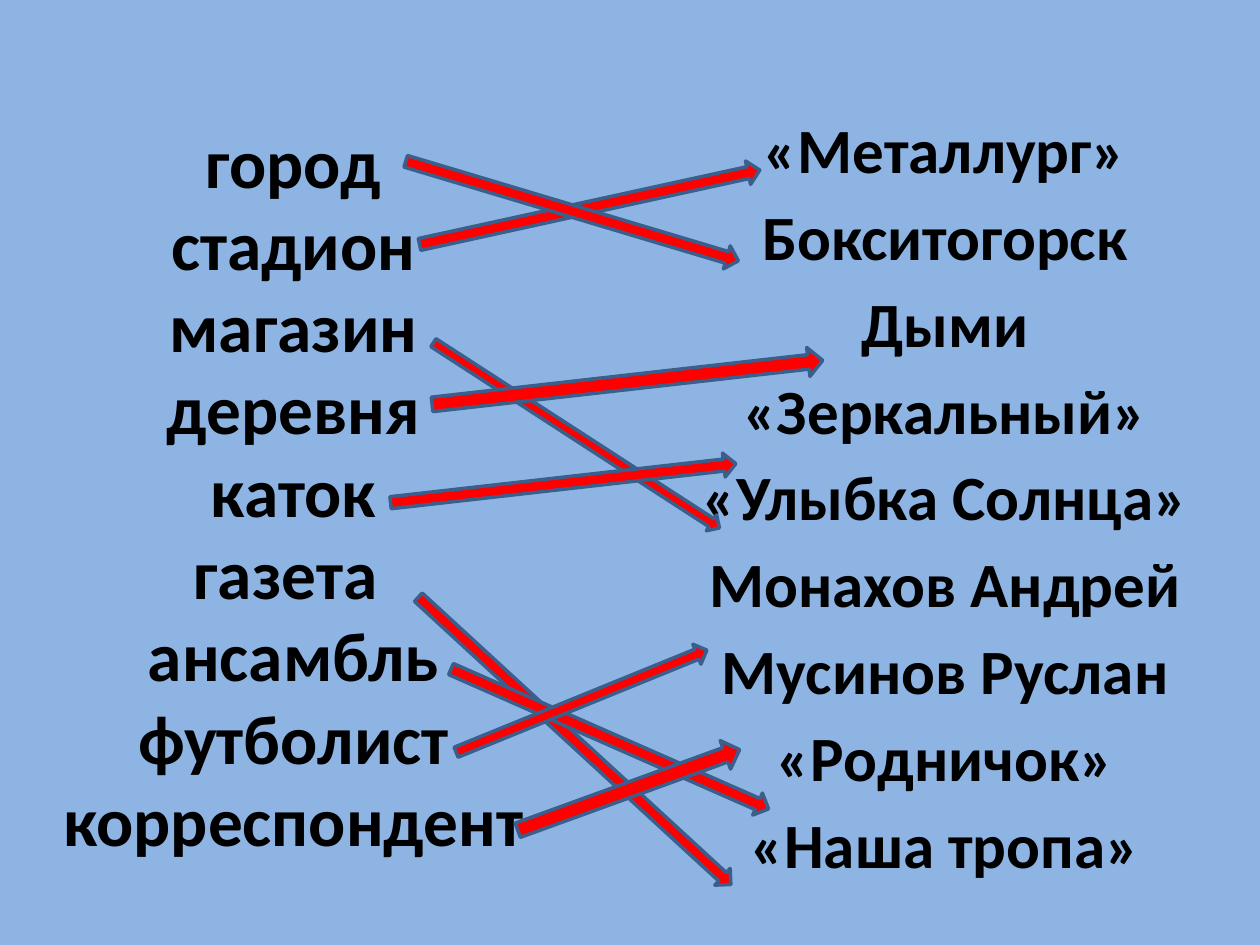
import math
from dataclasses import dataclass

from pptx import Presentation
from pptx import util as u
from pptx.dml.color import RGBColor
from pptx.enum import shapes, text

WORDS = ["город", "стадион", "магазин", "деревня", "каток", "газета ",
         "ансамбль", "футболист", "корреспондент"]
NAMES = ["«Металлург»", "Бокситогорск", "Дыми", "«Зеркальный»", "«Улыбка Солнца»",
         "Монахов Андрей", "Мусинов Руслан", "«Родничок»", "«Наша тропа»"]

# tail (x, y), tip (x, y), thickness, in inches, from back to front
ARROWS = [
    ((3.33, 1.94), (6.03, 1.35), 0.19),  # стадион
    ((3.44, 2.72), (5.71, 4.19), 0.15),  # магазин
    ((3.43, 3.21), (6.53, 2.86), 0.23),  # деревня
    ((3.10, 3.99), (5.84, 3.68), 0.19),  # каток
    ((3.32, 4.74), (5.80, 7.02), 0.18),  # газета
    ((3.58, 5.31), (6.10, 6.42), 0.19),  # ансамбль
    ((3.62, 5.97), (5.61, 5.16), 0.17),  # футболист
    ((4.11, 6.59), (5.87, 5.95), 0.24),  # корреспондент
    ((3.22, 1.28), (5.86, 2.07), 0.19),  # город
]


@dataclass(frozen=True)
class Theme:
    back: RGBColor = RGBColor.from_string("8EB4E3")
    ink: RGBColor = RGBColor.from_string("000000")
    arrow: RGBColor = RGBColor.from_string("FF0000")
    edge: RGBColor = RGBColor.from_string("3A5F8C")
    font: str = "Calibri"
    word_size: float = 39.6
    name_size: float = 36
    edge_width: float = 2


T = Theme()


def add_text(s, paragraphs, box, size, anchor=text.MSO_ANCHOR.TOP,
             before=0, spacing=1.0, bottom=0.05):
    """Centred bold column; a newline inside a paragraph is a line break."""
    tf = s.shapes.add_textbox(*map(u.Inches, box)).text_frame
    tf.word_wrap = True
    tf.vertical_anchor = anchor
    tf.margin_bottom = u.Inches(bottom)
    for i, content in enumerate(paragraphs):
        p = tf.paragraphs[0] if i == 0 else tf.add_paragraph()
        p.text = content.replace("\n", "\v")
        p.alignment = text.PP_ALIGN.CENTER
        p.space_before = u.Pt(before)
        p.line_spacing = spacing
        for r in p.runs:
            r.font.name, r.font.size, r.font.bold = T.font, u.Pt(size), True
            r.font.color.rgb = T.ink


def add_arrow(s, tail, tip, thickness):
    """Block arrow laid out flat around its middle, then turned towards the tip."""
    (x1, y1), (x2, y2) = tail, tip
    length = math.dist(tail, tip)
    left, top = (x1 + x2 - length) / 2, (y1 + y2 - thickness) / 2
    sp = s.shapes.add_shape(shapes.MSO_SHAPE.RIGHT_ARROW,
                            *map(u.Inches, (left, top, length, thickness)))
    sp.rotation = math.degrees(math.atan2(y2 - y1, x2 - x1)) % 360
    sp.shadow.inherit = False
    sp.fill.solid()
    sp.fill.fore_color.rgb = T.arrow
    sp.line.color.rgb = T.edge
    sp.line.width = u.Pt(T.edge_width)


def main():
    prs = Presentation()
    prs.slide_width, prs.slide_height = u.Inches(10), u.Inches(7.5)
    s = prs.slides.add_slide(prs.slide_layouts[6])
    s.background.fill.solid()
    s.background.fill.fore_color.rgb = T.back

    add_text(s, ["\n".join(WORDS)], (0.33, 1.17, 4, 6.08), T.word_size,
             anchor=text.MSO_ANCHOR.MIDDLE, spacing=0.99, bottom=0.65)
    add_text(s, NAMES, (5.25, 0.83, 4.5, 6.5), T.name_size, before=6.4)
    for arrow in ARROWS:
        add_arrow(s, *arrow)
    prs.save("out.pptx")


if __name__ == "__main__":
    main()
